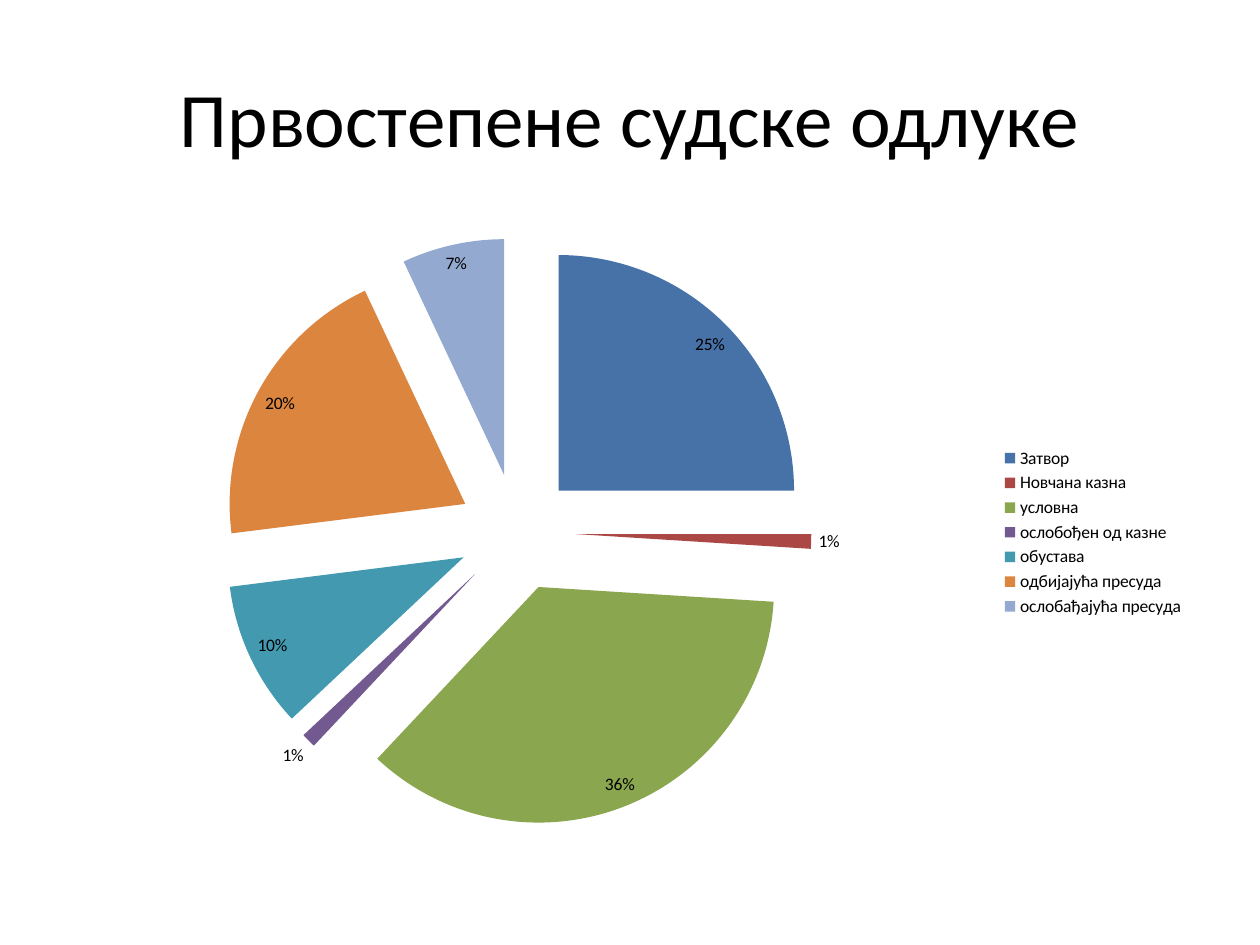
import lxml.etree
import pptx
import pptx.chart.data
import pptx.dml.color
import pptx.enum.chart
import pptx.enum.text
import pptx.oxml.ns
import pptx.util

Inches = pptx.util.Inches
COLORS = {
    "text": "000000",
    "background": "FFFFFF",
    "prison": "4672A8",
    "fine": "AB4744",
    "suspended": "8AA64F",
    "released": "725990",
    "discontinued": "4299B0",
    "rejected": "DC853E",
    "acquitted": "93A9CF",
}
DECISIONS = [
    ("Затвор", 25, "prison"),
    ("Новчана казна", 1, "fine"),
    ("условна", 36, "suspended"),
    ("ослобођен од казне", 1, "released"),
    ("обустава", 10, "discontinued"),
    ("одбијајућа пресуда", 20, "rejected"),
    ("ослобађајућа пресуда", 7, "acquitted"),
]


class SlideBuilder:
    """Holds the style and the current slide, and adds each kind of element."""

    def __init__(self, presentation):
        self.font = "Calibri"
        self.slide = presentation.slides.add_slide(presentation.slide_layouts[5])
        self.fill(self.slide.background.fill, "background")

    def fill(self, fill, color):
        fill.solid()
        fill.fore_color.rgb = pptx.dml.color.RGBColor.from_string(COLORS[color])

    def style(self, font, size):
        font.name = self.font
        font.size = pptx.util.Pt(size)
        self.fill(font.fill, "text")

    def title(self, text, left, top, width, height):
        shape = self.slide.shapes.title
        shape.left, shape.top = Inches(left), Inches(top)
        shape.width, shape.height = Inches(width), Inches(height)
        shape.text_frame.vertical_anchor = pptx.enum.text.MSO_ANCHOR.MIDDLE
        paragraph = shape.text_frame.paragraphs[0]
        paragraph.alignment = pptx.enum.text.PP_ALIGN.CENTER
        run = paragraph.add_run()
        run.text = text
        self.style(run.font, 44)

    def pie(self, decisions, left, top, width, height, explosion):
        data = pptx.chart.data.CategoryChartData()
        data.categories = [name for name, share, color in decisions]
        data.add_series("Series 1", [share for name, share, color in decisions])
        chart = self.slide.shapes.add_chart(
            pptx.enum.chart.XL_CHART_TYPE.PIE,
            Inches(left), Inches(top), Inches(width), Inches(height), data,
        ).chart
        self.style(chart.font, 10)
        chart.has_title = False
        chart.has_legend = True
        chart.legend.position = pptx.enum.chart.XL_LEGEND_POSITION.RIGHT
        chart.legend.include_in_layout = False

        plot = chart.plots[0]
        plot.vary_by_categories = True
        series = plot.series[0]
        for index, (name, share, color) in enumerate(decisions):
            self.fill(series.points[index].format.fill, color)
        element = lxml.etree.Element(pptx.oxml.ns.qn("c:explosion"), val=str(explosion))
        series._element.find(pptx.oxml.ns.qn("c:dPt")).addprevious(element)

        plot.has_data_labels = True
        labels = plot.data_labels
        labels.show_percentage = True
        labels.show_value = False
        labels.number_format = "0%"
        labels.number_format_is_linked = False
        labels.position = pptx.enum.chart.XL_LABEL_POSITION.BEST_FIT
        self.style(labels.font, 10)


def main():
    presentation = pptx.Presentation()
    presentation.slide_width = Inches(10)
    presentation.slide_height = Inches(7.5)
    builder = SlideBuilder(presentation)
    builder.title("Првостепене судске одлуке", 0.5, 0.3, 9, 1.25)
    builder.pie(DECISIONS, 0.5, 1.75, 9, 4.95, explosion=25)
    presentation.save("out.pptx")


if __name__ == "__main__":
    main()
